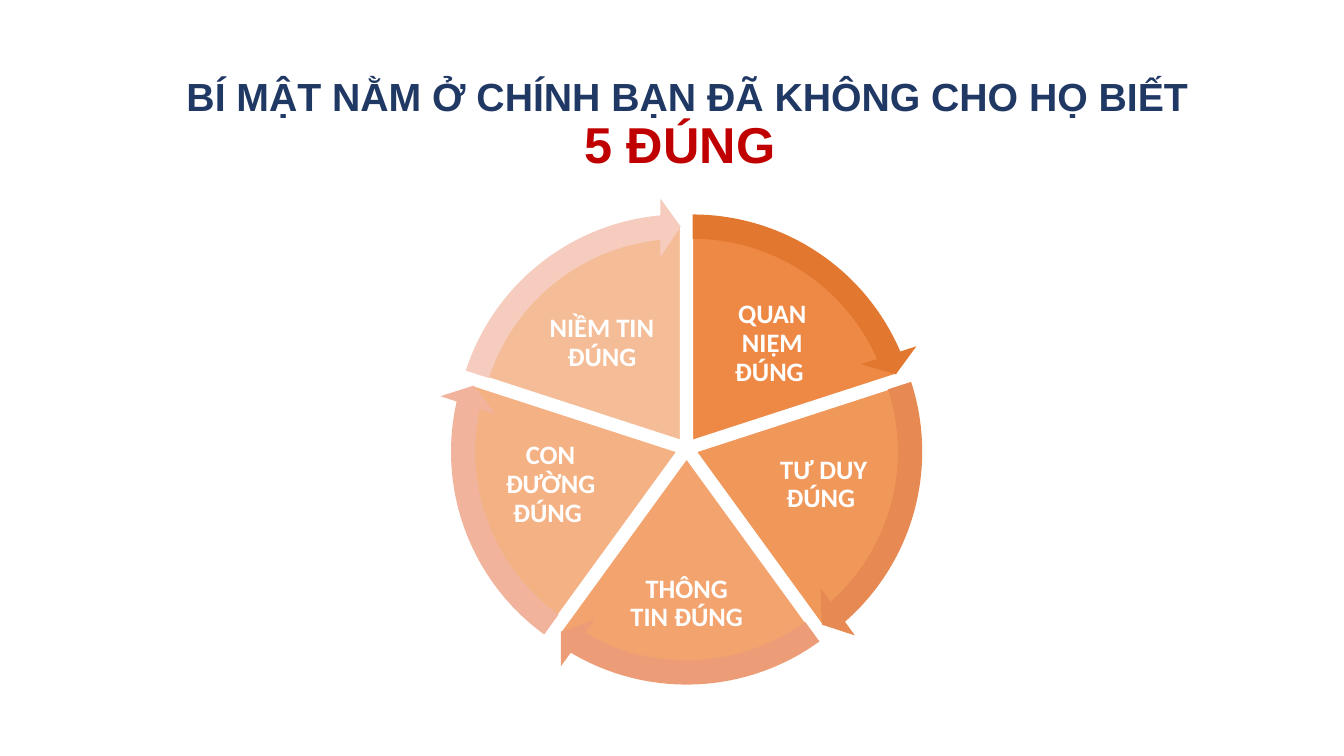
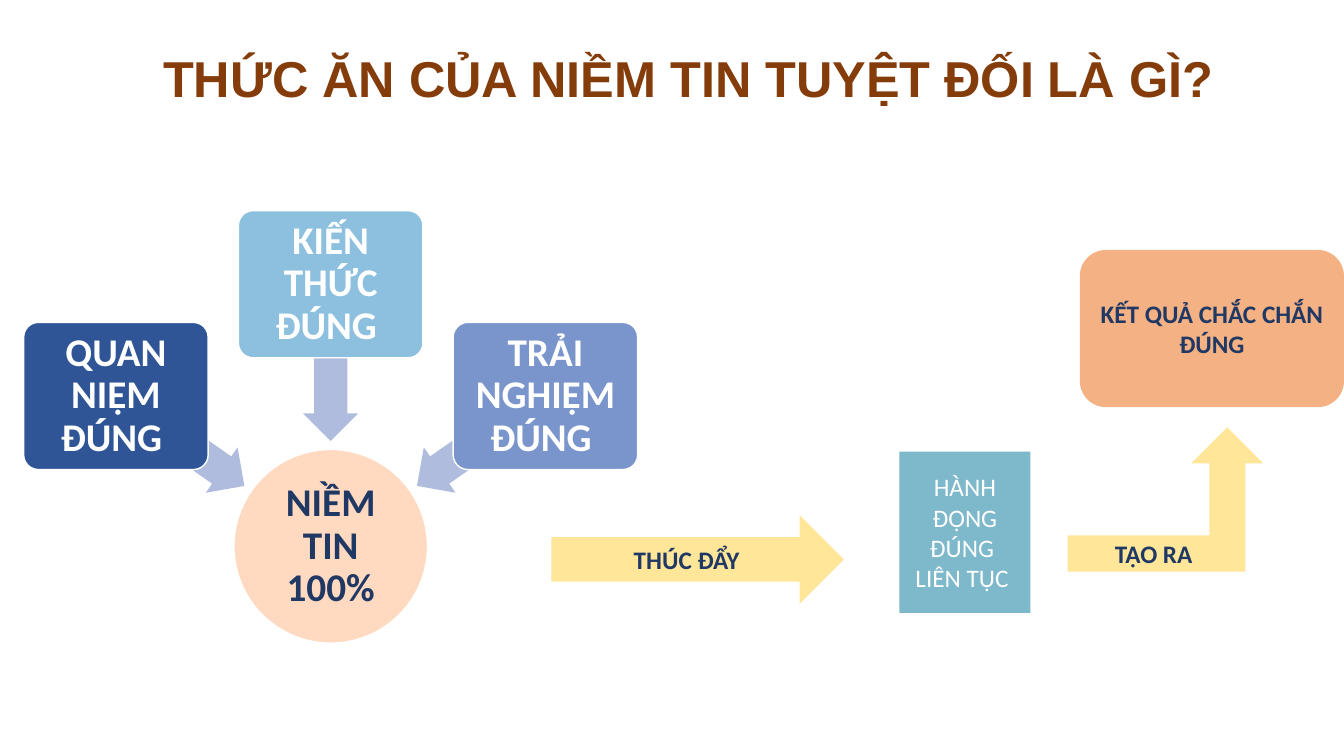
"""Build two slides: a wheel of five rights and the inputs of absolute belief."""
import math

from lxml import etree
from pptx import Presentation
from pptx.dml.color import RGBColor
from pptx.enum import shapes, text
from pptx.oxml.ns import qn
from pptx.util import Inches, Pt

NAVY, WHITE, RED, BROWN = "203864", "FFFFFF", "C00000", "843C0B"
ORANGE, YELLOW, LILAC = "ED7D31", "FFE699", "B0BCDE"
SHAPE = shapes.MSO_SHAPE

WHEEL_TITLE = [("BÍ MẬT NẰM Ở CHÍNH BẠN ĐÃ KHÔNG CHO HỌ BIẾT ", 28, NAVY),
               ("5 ĐÚNG ", 36, RED)]
WHEEL = [
    ("QUAN NIỆM ĐÚNG ", (6.97, 2.95, 1.38, 0.92), 90, "E2772F"),
    ("TƯ DUY ĐÚNG ", (7.53, 4.3, 1.28, 1.02), 80, "E78953"),
    ("THÔNG TIN ĐÚNG", (6.2, 5.43, 1.22, 1.12), 70, "EC9D77"),
    ("CON ĐƯỜNG ĐÚNG ", (4.82, 4.3, 1.28, 1.02), 60, "F1B39B"),
    ("NIỀM TIN ĐÚNG", (5.28, 2.95, 1.38, 0.92), 50, "F6CCBF"),
]
WHEEL_CENTER, WEDGE_SHIFT = (6.81, 4.45), 0.1
PIE_SIZE, RIM_SIZE, HEAD_ANGLE = 4.28, 4.82, 5.46
DEGREE = 0.6

BELIEF_TITLE = [("THỨC ĂN CỦA NIỀM TIN TUYỆT ĐỐI LÀ GÌ?", 36, BROWN)]
HUB_TEXT, HUB_CENTER = "NIỀM TIN 100%", (3.28, 5.42)
INPUTS = [
    ("QUAN NIỆM ĐÚNG ", 215, "2F5597"),
    ("KIẾN THỨC ĐÚNG ", 270, "8CC0DE"),
    ("TRẢI NGHIỆM ĐÚNG ", 325, "7995CB"),
]
CHAIN = [
    (SHAPE.RIGHT_ARROW, (5.47, 5.11, 2.9, 0.88), YELLOW, ["THÚC ĐẨY"], NAVY, True),
    (SHAPE.RECTANGLE, (8.92, 4.48, 1.3, 1.6), "7EB8CB",
     ["HÀNH ĐỘNG ĐÚNG ", "LIÊN TỤC "], WHITE, False),
    (SHAPE.BENT_UP_ARROW, (10.59, 4.24, 1.94, 1.43), YELLOW, ["TẠO RA "], NAVY, True),
    (SHAPE.ROUNDED_RECTANGLE, (10.71, 2.48, 2.62, 1.56), "F4B183",
     ["KẾT QUẢ CHẮC CHẮN ĐÚNG"], NAVY, True),
]


def rgb(value):
    return RGBColor.from_string(value)


def polar(center, radius, angle):
    a = math.radians(angle)
    return center[0] + radius * math.cos(a), center[1] + radius * math.sin(a)


def around(center, width, height):
    return center[0] - width / 2, center[1] - height / 2, width, height


def add_shape(slide, kind, box, fill, line=None, adj=(), alpha=None, angle=0):
    sp = slide.shapes.add_shape(kind, *map(Inches, box))
    sp.shadow.inherit = False
    sp.rotation = angle
    for i, value in enumerate(adj):
        sp.adjustments[i] = value
    sp.fill.solid()
    sp.fill.fore_color.rgb = rgb(fill)
    if alpha:
        color = sp.fill._xPr.find(qn("a:solidFill"))[0]
        etree.SubElement(color, qn("a:alpha")).set("val", str(alpha * 1000))
    if line:
        sp.line.color.rgb = rgb(line)
        sp.line.width = Pt(1)
    else:
        sp.line.fill.background()
    return sp


def add_box(slide, box):
    return slide.shapes.add_textbox(*map(Inches, box))


def write(sp, lines, size, color, bold=True, inset=None, spacing=None):
    tf = sp.text_frame
    tf.word_wrap = True
    tf.vertical_anchor = text.MSO_ANCHOR.MIDDLE
    if inset is not None:
        tf.margin_left = tf.margin_right = Inches(inset)
        tf.margin_top = tf.margin_bottom = Inches(inset)
    for i, line in enumerate(lines):
        p = tf.add_paragraph() if i else tf.paragraphs[0]
        p.text = line
        p.alignment = text.PP_ALIGN.CENTER
        p.line_spacing = spacing
        p.font.name, p.font.size, p.font.bold = "Calibri", Pt(size), bold
        p.font.color.rgb = rgb(color)


def add_title(slide, box, runs):
    tf = add_box(slide, box).text_frame
    tf.word_wrap = True
    tf.vertical_anchor = text.MSO_ANCHOR.BOTTOM
    p = tf.paragraphs[0]
    p.alignment, p.line_spacing = text.PP_ALIGN.CENTER, 0.9
    p.font.name, p.font.bold = "Arial", True
    for words, size, color in runs:
        r = p.add_run()
        r.text = words
        r.font.name, r.font.bold = "Arial", True
        r.font.size, r.font.color.rgb = Pt(size), rgb(color)


def build_wheel(slide):
    add_title(slide, (1.67, 0.5, 10.29, 1.28), WHEEL_TITLE)
    step = 360 / len(WHEEL)
    rims = []
    for i, (label, box, alpha, rim) in enumerate(WHEEL):
        start = (270 + i * step) % 360
        end = (start + step) % 360
        center = polar(WHEEL_CENTER, WEDGE_SHIFT, start + step / 2)
        add_shape(slide, SHAPE.PIE, around(center, PIE_SIZE, PIE_SIZE), ORANGE, WHITE,
                  (start * DEGREE, end * DEGREE), alpha)
        write(add_box(slide, box), [label], 19, WHITE, inset=0.03, spacing=0.9)
        adj = (0.05, HEAD_ANGLE * DEGREE, (end - HEAD_ANGLE) * DEGREE, start * DEGREE, 0.06)
        rims.append((center, rim, adj))
    for center, rim, adj in rims:
        add_shape(slide, SHAPE.CIRCULAR_ARROW, around(center, RIM_SIZE, RIM_SIZE), rim, adj=adj)


def build_belief(slide):
    add_title(slide, (1.36, 0.2, 10.94, 0.93), BELIEF_TITLE)
    hub = add_shape(slide, SHAPE.OVAL, around(HUB_CENTER, 1.92, 1.92), "FFD9C0", WHITE)
    write(hub, [HUB_TEXT], 28, NAVY, inset=0.02, spacing=0.9)
    for label, angle, fill in INPUTS:
        add_shape(slide, SHAPE.LEFT_ARROW, around(polar(HUB_CENTER, 1.82, angle), 1.55, 0.55),
                  LILAC, adj=(0.6, 0.5), angle=angle)
        card = add_shape(slide, SHAPE.ROUNDED_RECTANGLE,
                         around(polar(HUB_CENTER, 2.6, angle), 1.83, 1.46), fill, WHITE, (0.1,))
        write(card, [label], 28, WHITE, inset=0.06, spacing=0.9)
    for kind, box, fill, lines, color, bold in CHAIN:
        write(add_shape(slide, kind, box, fill), lines, 18, color, bold)


def main():
    prs = Presentation()
    prs.slide_width, prs.slide_height = Inches(13.33), Inches(7.5)
    for build in (build_wheel, build_belief):
        build(prs.slides.add_slide(prs.slide_layouts[6]))
    prs.save("out.pptx")


if __name__ == "__main__":
    main()
